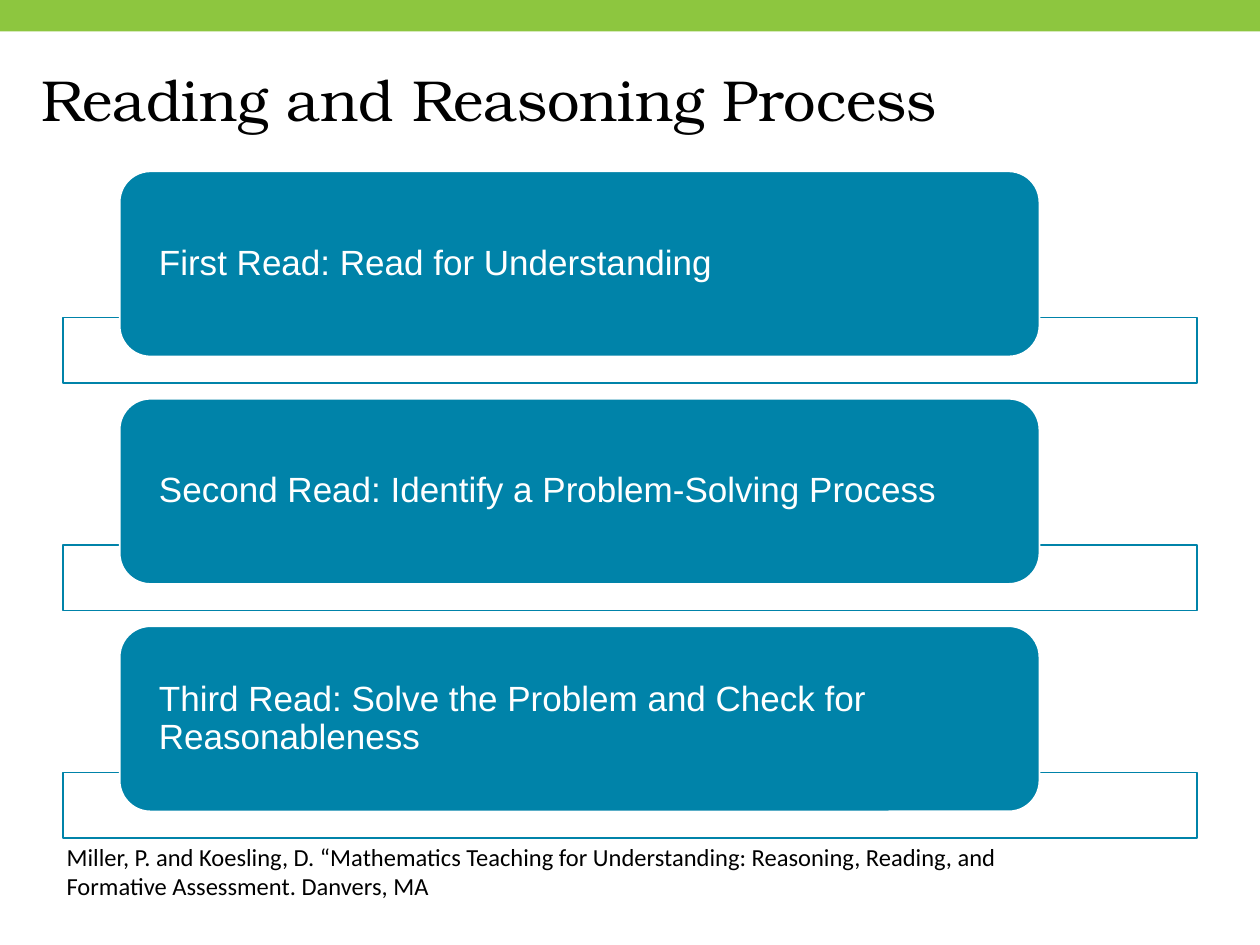
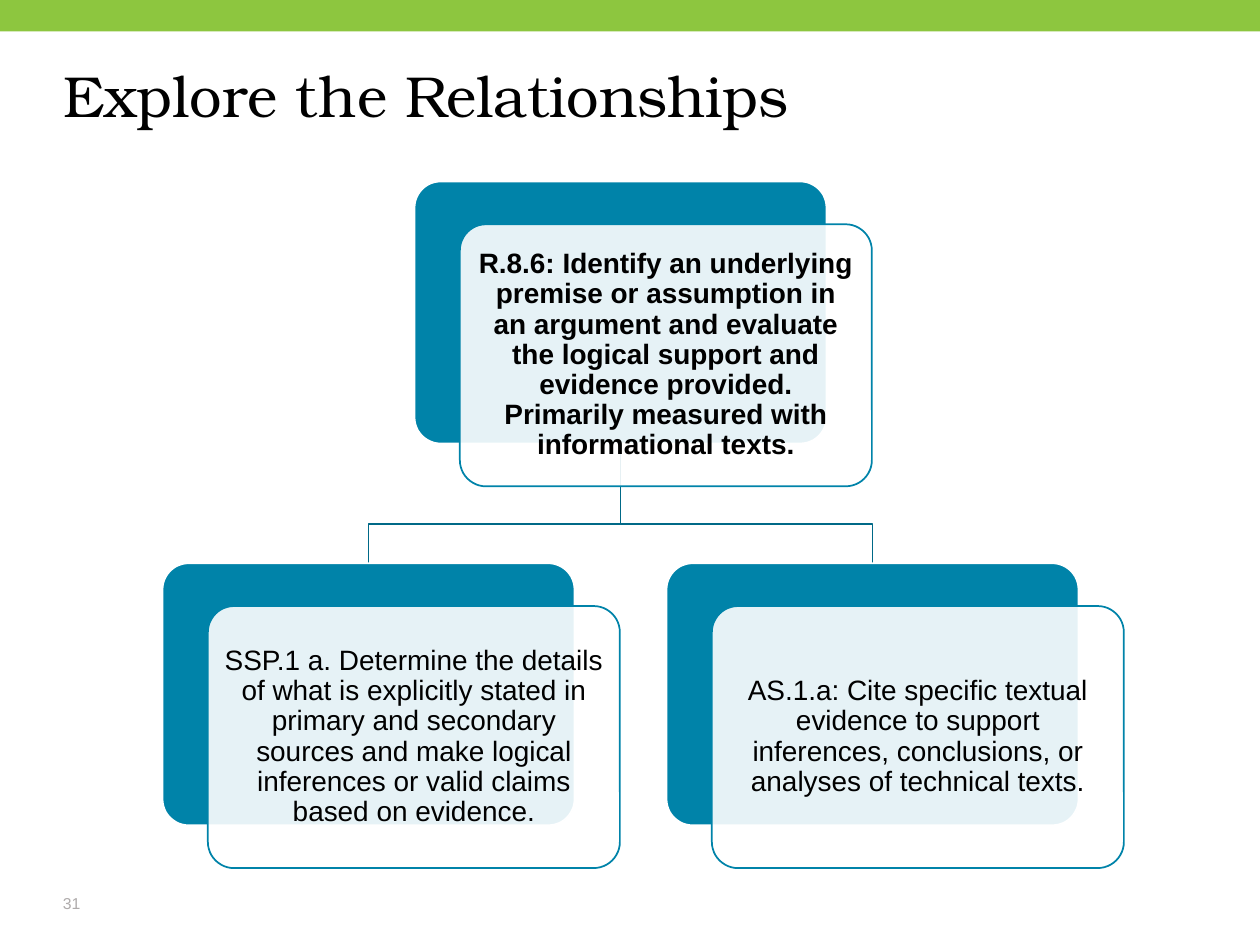
"""Build two slides: a three-step reading process and a relationship tree."""
import pptx
import pptx.dml.color
import pptx.enum.shapes
import pptx.enum.text
import pptx.oxml.ns
import pptx.oxml.xmlchemy
import pptx.util

COLUMNS, ROWS = 20, 15
WIDTH, HEIGHT = pptx.util.Inches(10), pptx.util.Inches(7.5)
GREEN, BLUE, DARK_BLUE = "8DC63F", "0083A9", "006987"
WHITE, BLACK, GREY = "FFFFFF", "000000", "AFABAB"
SHAPES = pptx.enum.shapes.MSO_SHAPE
ANCHORS = pptx.enum.text.MSO_ANCHOR
ALIGNMENTS = pptx.enum.text.PP_ALIGN

TITLE_FONT = {"name": "TeX Gyre Bonum", "size": pptx.util.Pt(33)}
STEP_FONT = {"name": "Arial", "size": pptx.util.Pt(20)}
CARD_FONT = {"name": "Arial", "size": pptx.util.Pt(16)}
SOURCE_FONT = {"name": "Calibri", "size": pptx.util.Pt(14)}
NUMBER_FONT = {"name": "Arial", "size": pptx.util.Pt(9)}

STEPS = [
    "First Read: Read for Understanding",
    "Second Read: Identify a Problem-Solving Process",
    "Third Read: Solve the Problem and Check for Reasonableness",
]
SOURCE = ("Miller, P. and Koesling, D. “Mathematics Teaching for Understanding: "
          "Reasoning, Reading, and Formative Assessment. Danvers, MA")
ROOT_STANDARD = ("R.8.6: Identify an underlying premise or assumption in an argument "
                 "and evaluate the logical support and evidence provided. "
                 "Primarily measured with informational texts.")
CHILD_STANDARDS = [
    "SSP.1 a. Determine the details of what is explicitly stated in primary and "
    "secondary sources and make logical inferences or valid claims based on evidence.",
    "AS.1.a: Cite specific textual evidence to support inferences, conclusions, "
    "or analyses of technical texts.",
]
STEP_PITCH = 3.61
CARD_WIDTH, CARD_HEIGHT = 6.54, 4.16
CARD_SHIFT = (0.72, 0.68)
ROOT_LEFT, ROOT_TOP = 6.58, 2.88
CHILD_LEFT, CHILD_TOP, CHILD_PITCH = 2.58, 8.94, 8
ELBOW_ROW = 8.32


def across(columns):
    """Turn grid columns into a length."""
    return round(WIDTH * columns / COLUMNS)


def down(rows):
    """Turn grid rows into a length."""
    return round(HEIGHT * rows / ROWS)


def place(left, top, width, height):
    """Turn a grid cell range into a position and size."""
    return across(left), down(top), across(width), down(height)


def color(value):
    """Turn a hex string into a colour."""
    return pptx.dml.color.RGBColor.from_string(value)


def set_values(target, values):
    """Set each attribute named in a dict."""
    for name, value in values.items():
        setattr(target, name, value)


def outline(shape, line):
    """Give a shape a one-point line, or none."""
    if line is None:
        shape.line.fill.background()
        return
    shape.line.color.rgb = color(line)
    shape.line.width = pptx.util.Pt(1)


def add_box(slide, kind, area, fill, line=None, opacity=None, rounding=None):
    """Add a filled preset shape."""
    shape = slide.shapes.add_shape(kind, *place(*area))
    shape.shadow.inherit = False
    shape.fill.solid()
    shape.fill.fore_color.rgb = color(fill)
    if opacity is not None:
        properties = shape.element.spPr
        solid_color = properties.find(".//" + pptx.oxml.ns.qn("a:srgbClr"))
        alpha = pptx.oxml.xmlchemy.OxmlElement("a:alpha")
        alpha.set("val", str(opacity * 1000))
        solid_color.append(alpha)
    outline(shape, line)
    if rounding is not None:
        shape.adjustments[0] = rounding
    return shape


def write(shape, text, font, text_color, margins=(0, 0), anchor=ANCHORS.TOP,
          alignment=ALIGNMENTS.LEFT, spacing=0.9):
    """Write one paragraph into a shape."""
    side, edge = (pptx.util.Inches(margin) for margin in margins)
    set_values(shape.text_frame, {
        "word_wrap": True, "vertical_anchor": anchor,
        "margin_left": side, "margin_right": side,
        "margin_top": edge, "margin_bottom": edge,
    })
    paragraph = shape.text_frame.paragraphs[0]
    paragraph.text = text
    set_values(paragraph, {"alignment": alignment, "line_spacing": spacing})
    set_values(paragraph.font, font)
    paragraph.font.color.rgb = color(text_color)


def add_text(slide, area, text, font, text_color, **layout):
    """Add a text box."""
    write(slide.shapes.add_textbox(*place(*area)), text, font, text_color, **layout)


def add_slide(presentation, title, title_area):
    """Add a blank slide with the top band and a title."""
    slide = presentation.slides.add_slide(presentation.slide_layouts[6])
    add_box(slide, SHAPES.RECTANGLE, (0, 0, COLUMNS, 0.5), GREEN)
    add_text(slide, title_area, title, TITLE_FONT, BLACK)
    return slide


def add_step(slide, index, text):
    """Add one step block over its rail."""
    shift = index * STEP_PITCH
    add_box(slide, SHAPES.RECTANGLE, (1, 5.04 + shift, 18, 1.04), WHITE, BLUE, 90)
    block = add_box(slide, SHAPES.ROUNDED_RECTANGLE,
                    (1.9, 2.72 + shift, 14.6, 2.94), BLUE, WHITE)
    write(block, text, STEP_FONT, WHITE, (0.24, 0), ANCHORS.MIDDLE)


def add_card(slide, left, top, text, bold=False):
    """Add a standard on a light card with a blue card behind it."""
    size = (CARD_WIDTH, CARD_HEIGHT)
    add_box(slide, SHAPES.ROUNDED_RECTANGLE, (left, top, *size), BLUE, WHITE, rounding=0.1)
    front = add_box(slide, SHAPES.ROUNDED_RECTANGLE,
                    (left + CARD_SHIFT[0], top + CARD_SHIFT[1], *size),
                    WHITE, BLUE, 90, 0.1)
    write(front, text, {**CARD_FONT, "bold": bold}, BLACK, (0.07, 0.07),
          ANCHORS.MIDDLE, ALIGNMENTS.CENTER)


def add_branch(slide, child_left):
    """Draw the bent line from the root card to a child card."""
    root_middle = across(ROOT_LEFT + CARD_WIDTH / 2)
    child_middle = across(child_left + CARD_WIDTH / 2)
    builder = slide.shapes.build_freeform(root_middle, down(ROOT_TOP + CARD_HEIGHT))
    builder.add_line_segments([
        (root_middle, down(ELBOW_ROW)),
        (child_middle, down(ELBOW_ROW)),
        (child_middle, down(CHILD_TOP)),
    ], close=False)
    branch = builder.convert_to_shape()
    branch.shadow.inherit = False
    branch.fill.background()
    outline(branch, DARK_BLUE)


def build_process(presentation):
    """Build the slide of three reading steps."""
    slide = add_slide(presentation, "Reading and Reasoning Process",
                      (0.66, 1.14, 18.62, 1.5))
    for index, text in enumerate(STEPS):
        add_step(slide, index, text)
    add_text(slide, (0.86, 13.26, 16.18, 1.14), SOURCE, SOURCE_FONT, BLACK,
             margins=(0.1, 0.05), spacing=1.0)


def build_relationships(presentation):
    """Build the slide of the standards tree."""
    slide = add_slide(presentation, "Explore the Relationships", (1, 1.08, 18.42, 1.74))
    add_text(slide, (1, 13.78, 1, 0.7), "31", NUMBER_FONT, GREY,
             anchor=ANCHORS.BOTTOM, spacing=1.0)
    child_lefts = [CHILD_LEFT + index * CHILD_PITCH for index in range(len(CHILD_STANDARDS))]
    for left in child_lefts:
        add_branch(slide, left)
    add_card(slide, ROOT_LEFT, ROOT_TOP, ROOT_STANDARD, bold=True)
    for left, text in zip(child_lefts, CHILD_STANDARDS):
        add_card(slide, left, CHILD_TOP, text)


def main():
    """Build and save the presentation."""
    presentation = pptx.Presentation()
    set_values(presentation, {"slide_width": WIDTH, "slide_height": HEIGHT})
    build_process(presentation)
    build_relationships(presentation)
    presentation.save("out.pptx")


if __name__ == "__main__":
    main()
